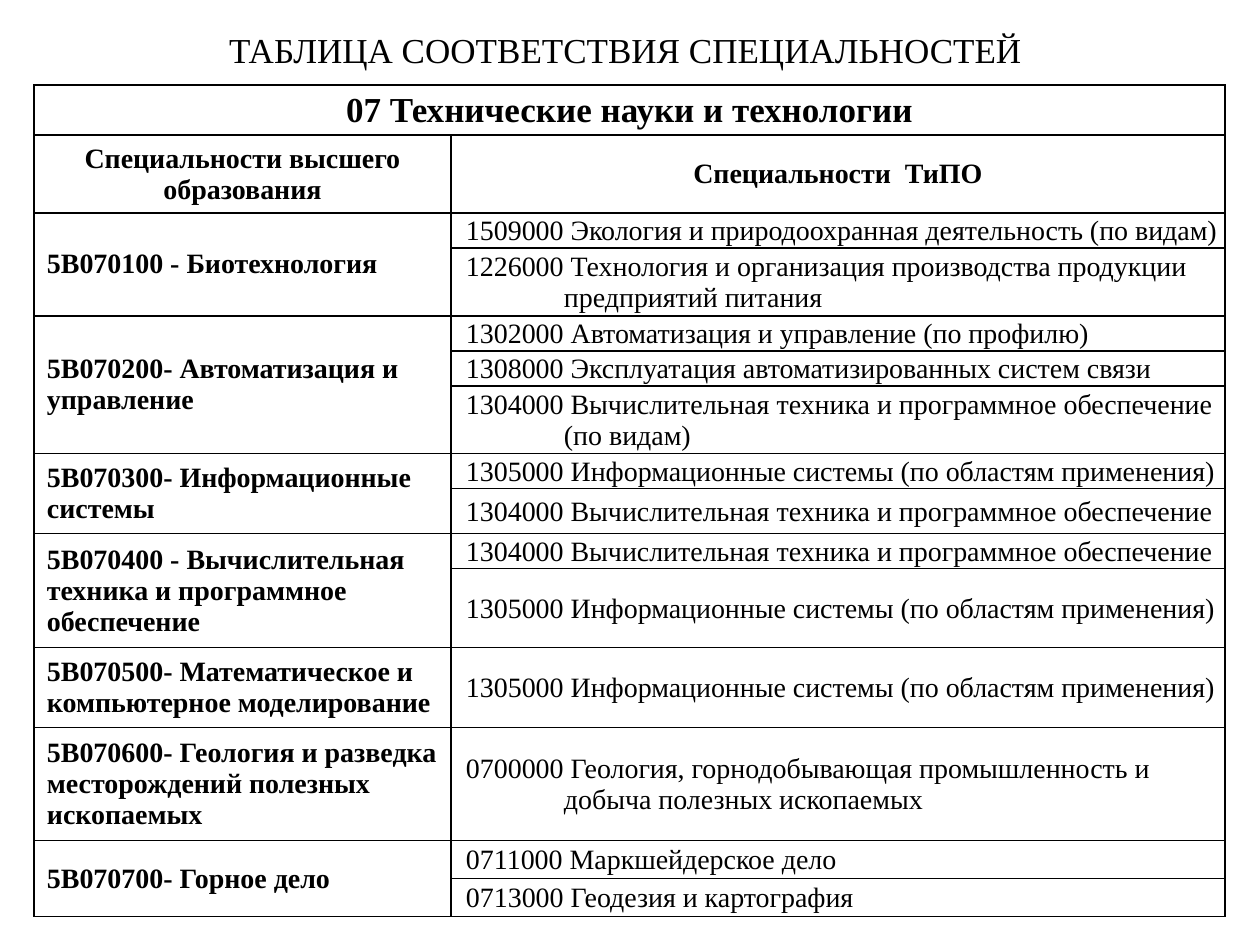
import pptx
import pptx.util
import pptx.dml.color
import pptx.enum.text
import pptx.oxml
import pptx.oxml.ns
from lxml import etree

PX = 914400 // 126
FONT = "Times New Roman"
BLACK = pptx.dml.color.RGBColor(0, 0, 0)
LEFT = pptx.enum.text.PP_ALIGN.LEFT
CENTER = pptx.enum.text.PP_ALIGN.CENTER
MIDDLE = pptx.enum.text.MSO_ANCHOR.MIDDLE

# Content: each group is a degree specialty and its (college specialty, row height) list
TITLE = "ТАБЛИЦА СООТВЕТСТВИЯ СПЕЦИАЛЬНОСТЕЙ"
SECTION = "07 Технические науки и технологии"
HEADERS = ["Специальности высшего образования", "Специальности  ТиПО"]
COMPUTING = "1304000 Вычислительная техника и программное обеспечение"
INFO_SYSTEMS = "1305000 Информационные системы (по областям применения)"
GROUPS = [
    ("5B070100 - Биотехнология", [
        ("1509000 Экология и природоохранная деятельность (по видам)", 35),
        ("1226000 Технология и организация производства продукции предприятий питания", 68)]),
    ("5B070200- Автоматизация и управление", [
        ("1302000 Автоматизация и управление (по профилю)", 35),
        ("1308000 Эксплуатация автоматизированных систем связи", 35),
        (COMPUTING + " (по видам)", 68)]),
    ("5B070300- Информационные системы", [(INFO_SYSTEMS, 35), (COMPUTING, 45)]),
    ("5B070400 - Вычислительная техника и программное обеспечение", [
        (COMPUTING, 35), (INFO_SYSTEMS, 79)]),
    ("5B070500- Математическое и компьютерное моделирование", [(INFO_SYSTEMS, 80)]),
    ("5B070600- Геология и разведка месторождений полезных ископаемых", [
        ("0700000 Геология, горнодобывающая промышленность и добыча полезных ископаемых", 113)]),
    ("5B070700- Горное дело", [
        ("0711000 Маркшейдерское дело", 38),
        ("0713000 Геодезия и картография", 38)]),
]
COL_WIDTHS = [417, 774]
HEADER_HEIGHTS = [50, 78]
TIGHT = (1, 1, 1, 0)      # cell margins: left, top, right, bottom
ROOMY = (13, 6, 13, 6)
HANG, CODE_OFFSET = 112, 14


def px(n):
    return pptx.util.Emu(n * PX)


def style_text(tf, size, bold, align):
    p = tf.paragraphs[0]
    p.alignment = align
    font = p.runs[0].font
    font.name, font.size, font.bold = FONT, pptx.util.Pt(size), bold
    font.color.rgb = BLACK


def fill_cell(cell, text, size=16, bold=True, align=CENTER, margins=TIGHT):
    cell.text_frame.text = text
    style_text(cell.text_frame, size, bold, align)
    cell.vertical_anchor = MIDDLE
    (cell.margin_left, cell.margin_top,
     cell.margin_right, cell.margin_bottom) = map(px, margins)


def hang_indent(cell):
    pPr = cell.text_frame.paragraphs[0]._p.get_or_add_pPr()
    pPr.set("marL", str(px(HANG)))
    pPr.set("indent", str(px(CODE_OFFSET - HANG)))


def add_borders(cell):
    tcPr = cell._tc.get_or_add_tcPr()
    for i, side in enumerate(("lnL", "lnR", "lnT", "lnB")):
        ln = etree.Element(pptx.oxml.ns.qn("a:" + side), w=str(pptx.util.Pt(1)))
        fill = etree.SubElement(ln, pptx.oxml.ns.qn("a:solidFill"))
        etree.SubElement(fill, pptx.oxml.ns.qn("a:srgbClr"), val=str(BLACK))
        tcPr.insert(i, ln)


prs = pptx.Presentation()
prs.slide_width, prs.slide_height = pptx.util.Inches(10), pptx.util.Inches(7.5)
s = prs.slides.add_slide(prs.slide_layouts[5])

# Title
title = s.shapes.title
title.left, title.top, title.width, title.height = map(px, (30, 16, 1191, 66))
title.text_frame.text = TITLE
title.text_frame.vertical_anchor = MIDDLE
style_text(title.text_frame, 20, False, CENTER)

# Table grid
heights = HEADER_HEIGHTS + [h for _, matches in GROUPS for _, h in matches]
table = s.shapes.add_table(len(heights), 2, px(34), px(85),
                           px(sum(COL_WIDTHS)), px(sum(heights))).table
table.first_row = table.horz_banding = False
for col, w in zip(table.columns, COL_WIDTHS):
    col.width = px(w)
for row, h in zip(table.rows, heights):
    row.height = px(h)
for cell in table.iter_cells():
    cell.fill.background()
    add_borders(cell)

# Section heading and column headers
table.cell(0, 0).merge(table.cell(0, 1))
fill_cell(table.cell(0, 0), SECTION, size=20)
for c, text in enumerate(HEADERS):
    fill_cell(table.cell(1, c), text)

# Specialty groups
r = len(HEADER_HEIGHTS)
for degree, matches in GROUPS:
    if len(matches) > 1:
        table.cell(r, 0).merge(table.cell(r + len(matches) - 1, 0))
    fill_cell(table.cell(r, 0), degree, align=LEFT, margins=ROOMY)
    for text, _ in matches:
        fill_cell(table.cell(r, 1), text, bold=False, align=LEFT)
        hang_indent(table.cell(r, 1))
        r += 1

prs.save("out.pptx")
